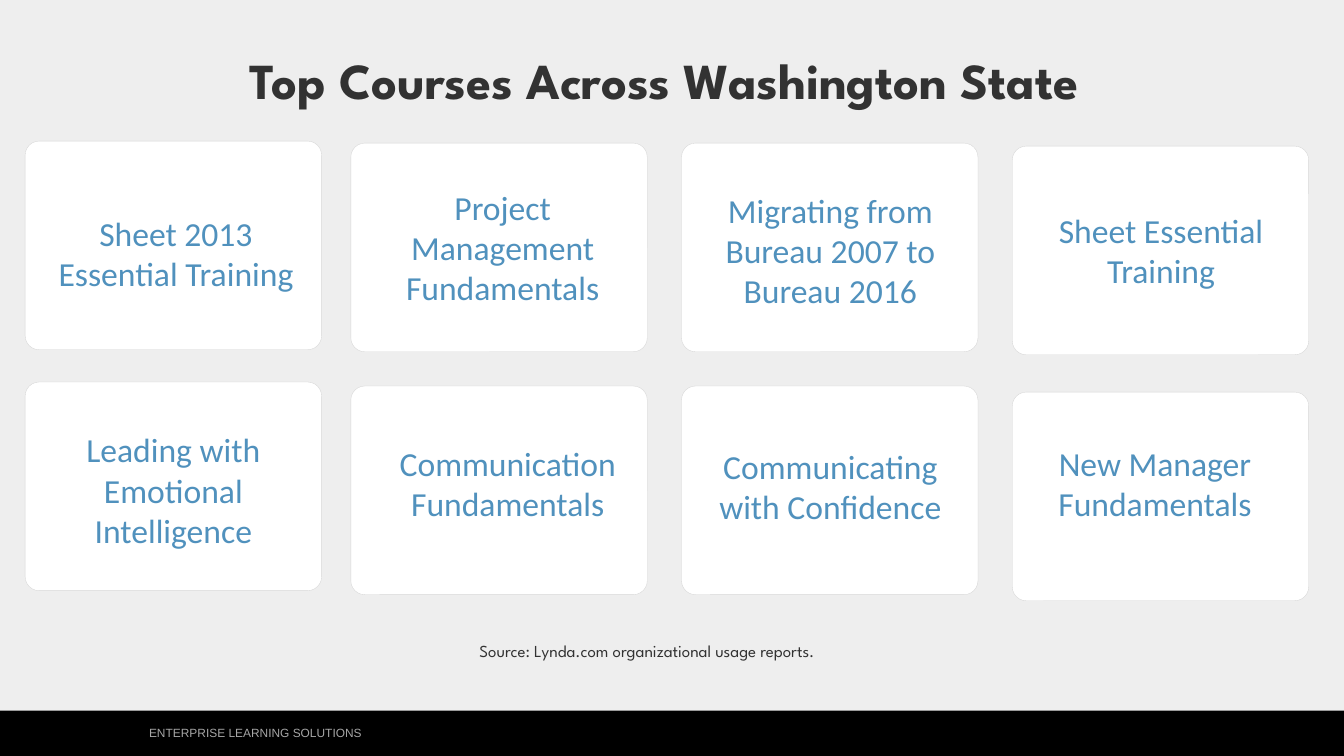
from dataclasses import dataclass

from pptx import Presentation
from pptx.dml.color import RGBColor
from pptx.enum.shapes import MSO_SHAPE
from pptx.enum.text import MSO_ANCHOR, MSO_AUTO_SIZE, PP_ALIGN
from pptx.util import Emu, Pt

PX = 9144  # one px is a hundredth of an inch


@dataclass(frozen=True)
class Theme:
    background: str = "EEEEEE"
    card: str = "FFFFFF"
    card_line: str = "D6D6D6"
    ink: str = "323232"
    course: str = "5091BD"
    band: str = "000000"
    footer: str = "A6A6A6"
    display_font: str = "League Spartan"
    course_font: str = "Calibri"
    footer_font: str = "Arial"
    title_size: float = 36
    course_size: float = 24
    source_size: float = 12
    footer_size: float = 8.5


class SlideBuilder:
    def __init__(self, prs, theme):
        self.theme = theme
        self.s = prs.slides.add_slide(prs.slide_layouts[5])
        fill = self.s.background.fill
        fill.solid()
        fill.fore_color.rgb = RGBColor.from_string(theme.background)

    def box(self, kind, left, top, width, height, fill):
        sp = self.s.shapes.add_shape(kind, *[Emu(v * PX) for v in (left, top, width, height)])
        sp.shadow.inherit = False
        sp.fill.solid()
        sp.fill.fore_color.rgb = RGBColor.from_string(fill)
        sp.line.fill.background()
        return sp

    def card(self, left, top, width, height):
        sp = self.box(MSO_SHAPE.ROUNDED_RECTANGLE, left, top, width, height, self.theme.card)
        sp.adjustments[0] = 0.067
        sp.line.color.rgb = RGBColor.from_string(self.theme.card_line)
        sp.line.width = Pt(0.25)

    def set_text(self, tf, text, font, size, color, align, bold=False):
        tf.word_wrap = True
        p = tf.paragraphs[0]
        p.text = text
        p.alignment = align
        p.font.name = font
        p.font.size = Pt(size)
        p.font.bold = bold
        p.font.color.rgb = RGBColor.from_string(color)
        return p

    def text(self, left, top, width, height, text, font, size, color, align=PP_ALIGN.CENTER):
        sp = self.s.shapes.add_textbox(*[Emu(v * PX) for v in (left, top, width, height)])
        self.set_text(sp.text_frame, text, font, size, color, align)

    def title(self, left, top, width, height, text):
        sp = self.s.shapes.title
        sp.left, sp.top, sp.width, sp.height = [Emu(v * PX) for v in (left, top, width, height)]
        tf = sp.text_frame
        tf.auto_size = MSO_AUTO_SIZE.NONE
        tf.vertical_anchor = MSO_ANCHOR.BOTTOM
        tf.margin_left = tf.margin_right = Emu(12 * PX)
        tf.margin_top = tf.margin_bottom = Emu(6 * PX)
        t = self.theme
        p = self.set_text(tf, text, t.display_font, t.title_size, t.ink, PP_ALIGN.CENTER, True)
        p.line_spacing = 1.5


CARD_LEFTS = (25, 348, 676, 1004)
CARD_SIZE = (294, 207)
LINE_HEIGHT = 40

# Per row, left to right: card top, caption left, top, width and line count, course
COURSE_ROWS = (
    (
        (140, 30, 206, 289, 2, "Sheet 2013 Essential Training"),
        (142, 354, 180, 289, 3, "Project Management Fundamentals"),
        (142, 679, 183, 289, 3, "Migrating from Bureau 2007 to Bureau 2016"),
        (145, 1007, 203, 289, 2, "Sheet Essential Training"),
    ),
    (
        (379, 19, 421, 306, 3, "Leading with Emotional Intelligence"),
        (383, 359, 434, 289, 2, "Communication Fundamentals"),
        (383, 679, 437, 289, 2, "Communicating with Confidence"),
        (389, 1001, 434, 289, 2, "New Manager Fundamentals"),
    ),
)


def main():
    prs = Presentation()
    prs.slide_width, prs.slide_height = Emu(1333 * PX), Emu(750 * PX)
    theme = Theme()
    slide = SlideBuilder(prs, theme)

    # Footer band
    slide.box(MSO_SHAPE.RECTANGLE, -1, 705, 1334, 45, theme.band)
    slide.text(138, 715, 289, 24, "ENTERPRISE LEARNING SOLUTIONS",
               theme.footer_font, theme.footer_size, theme.footer, PP_ALIGN.LEFT)

    # Title
    slide.title(99, 24, 1120, 91, "Top Courses Across Washington State")

    # Course cards
    for row in COURSE_ROWS:
        for card_left, (card_top, left, top, width, lines, course) in zip(CARD_LEFTS, row):
            slide.card(card_left, card_top, *CARD_SIZE)
            slide.text(left, top, width, lines * LINE_HEIGHT + 11, course,
                       theme.course_font, theme.course_size, theme.course)

    # Source line
    slide.text(394, 631, 496, 50, "Source: Lynda.com organizational usage reports.",
               theme.display_font, theme.source_size, theme.ink)

    prs.save("out.pptx")


if __name__ == "__main__":
    main()
